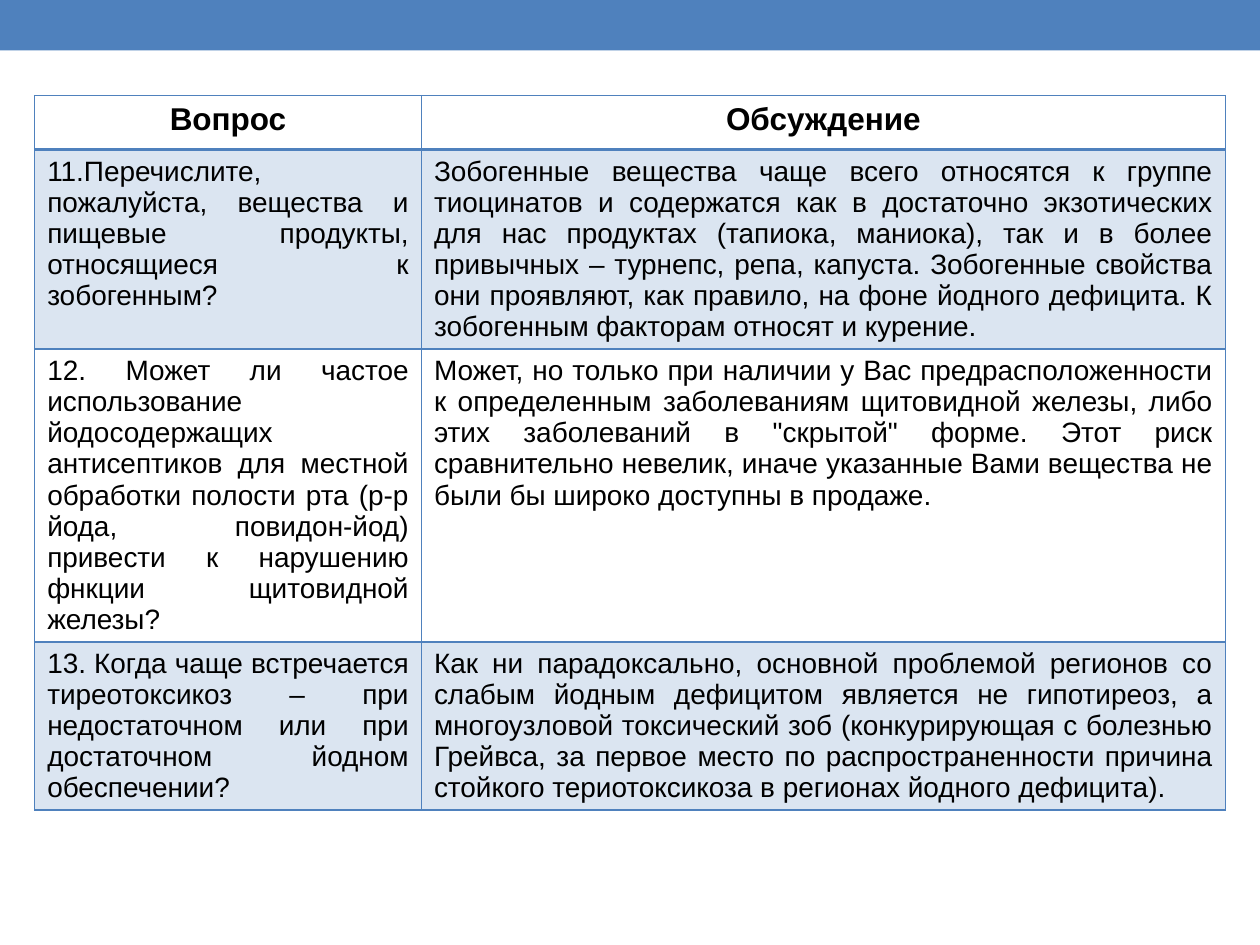
from dataclasses import dataclass

from lxml import etree
from pptx import Presentation
from pptx import util as u
from pptx.dml import color
from pptx.enum import shapes, text
from pptx.oxml import ns


@dataclass(frozen=True)
class Theme:
    accent: str = "4F81BD"
    ink: str = "000000"
    font: str = "Arial"
    heading_size: int = 18
    body_size: int = 16
    tint_percent: int = 20
    rule: int = 1
    heading_rule: int = 2


theme = Theme()
accent = color.RGBColor.from_string(theme.accent)
ink = color.RGBColor.from_string(theme.ink)

ROWS = [
    ("Вопрос", "Обсуждение"),
    (
        "11.Перечислите, пожалуйста, вещества и пищевые продукты, относящиеся к зобогенным?",
        "Зобогенные вещества чаще всего относятся к группе тиоцинатов и содержатся как в "
        "достаточно экзотических для нас продуктах (тапиока, маниока), так и в более привычных "
        "– турнепс, репа, капуста. Зобогенные свойства они проявляют, как правило, на фоне "
        "йодного дефицита. К зобогенным факторам относят и курение.",
    ),
    (
        "12. Может ли частое использование йодосодержащих антисептиков для местной обработки "
        "полости рта (р-р йода, повидон-йод) привести к нарушению фнкции щитовидной железы?",
        "Может, но только при наличии у Вас предрасположенности к определенным заболеваниям "
        "щитовидной железы, либо этих заболеваний в \"скрытой\" форме. Этот риск сравнительно "
        "невелик, иначе указанные Вами вещества не были бы широко доступны в продаже.",
    ),
    (
        "13. Когда чаще встречается тиреотоксикоз – при недостаточном или при достаточном "
        "йодном обеспечении?",
        "Как ни парадоксально, основной проблемой регионов со слабым йодным дефицитом является "
        "не гипотиреоз, а многоузловой токсический зоб (конкурирующая с болезнью Грейвса, за "
        "первое место по распространенности причина стойкого териотоксикоза в регионах йодного "
        "дефицита).",
    ),
]

presentation = Presentation()
presentation.slide_width = u.Inches(10)
presentation.slide_height = u.Inches(7.5)
slide = presentation.slides.add_slide(presentation.slide_layouts[6])
column = presentation.slide_width // 100
row = presentation.slide_height // 75


def set_border(properties, position, side, width):
    line = etree.Element(ns.qn(f"a:ln{side}"), w=str(u.Pt(width)))
    fill = etree.SubElement(line, ns.qn("a:solidFill"))
    etree.SubElement(fill, ns.qn("a:srgbClr"), val=theme.accent)
    properties.insert(position, line)


band = slide.shapes.add_shape(
    shapes.MSO_SHAPE.RECTANGLE, 0, 0, presentation.slide_width, 4 * row
)
band.shadow.inherit = False
band.fill.solid()
band.fill.fore_color.rgb = accent
band.line.fill.background()

column_widths = [int(share * column) for share in (30.7, 63.8)]
row_heights = [int(share * row) for share in (4.3, 15.8, 23.2, 13.3)]
table = slide.shapes.add_table(
    len(ROWS), 2, int(2.75 * column), int(7.6 * row), sum(column_widths), sum(row_heights)
).table
table.first_row = False
table.horz_banding = False
for table_column, width in zip(table.columns, column_widths):
    table_column.width = width

for row_index, (wording, height) in enumerate(zip(ROWS, row_heights)):
    table.rows[row_index].height = height
    heading = row_index == 0
    for cell, content in zip(table.rows[row_index].cells, wording):
        cell.text_frame.text = content
        paragraph = cell.text_frame.paragraphs[0]
        paragraph.alignment = text.PP_ALIGN.CENTER if heading else text.PP_ALIGN.JUSTIFY
        font = paragraph.runs[0].font
        font.name = theme.font
        font.size = u.Pt(theme.heading_size if heading else theme.body_size)
        font.bold = heading
        font.color.rgb = ink

        properties = cell._tc.get_or_add_tcPr()
        if row_index % 2:
            cell.fill.solid()
            cell.fill.fore_color.rgb = accent
            tint = properties.find(f".//{ns.qn('a:srgbClr')}")
            etree.SubElement(tint, ns.qn("a:alpha"), val=str(theme.tint_percent * 1000))
        else:
            cell.fill.background()
        for position, side in enumerate("LRTB"):
            strong = (row_index, side) in ((0, "B"), (1, "T"))
            set_border(properties, position, side, theme.heading_rule if strong else theme.rule)

presentation.save("out.pptx")
